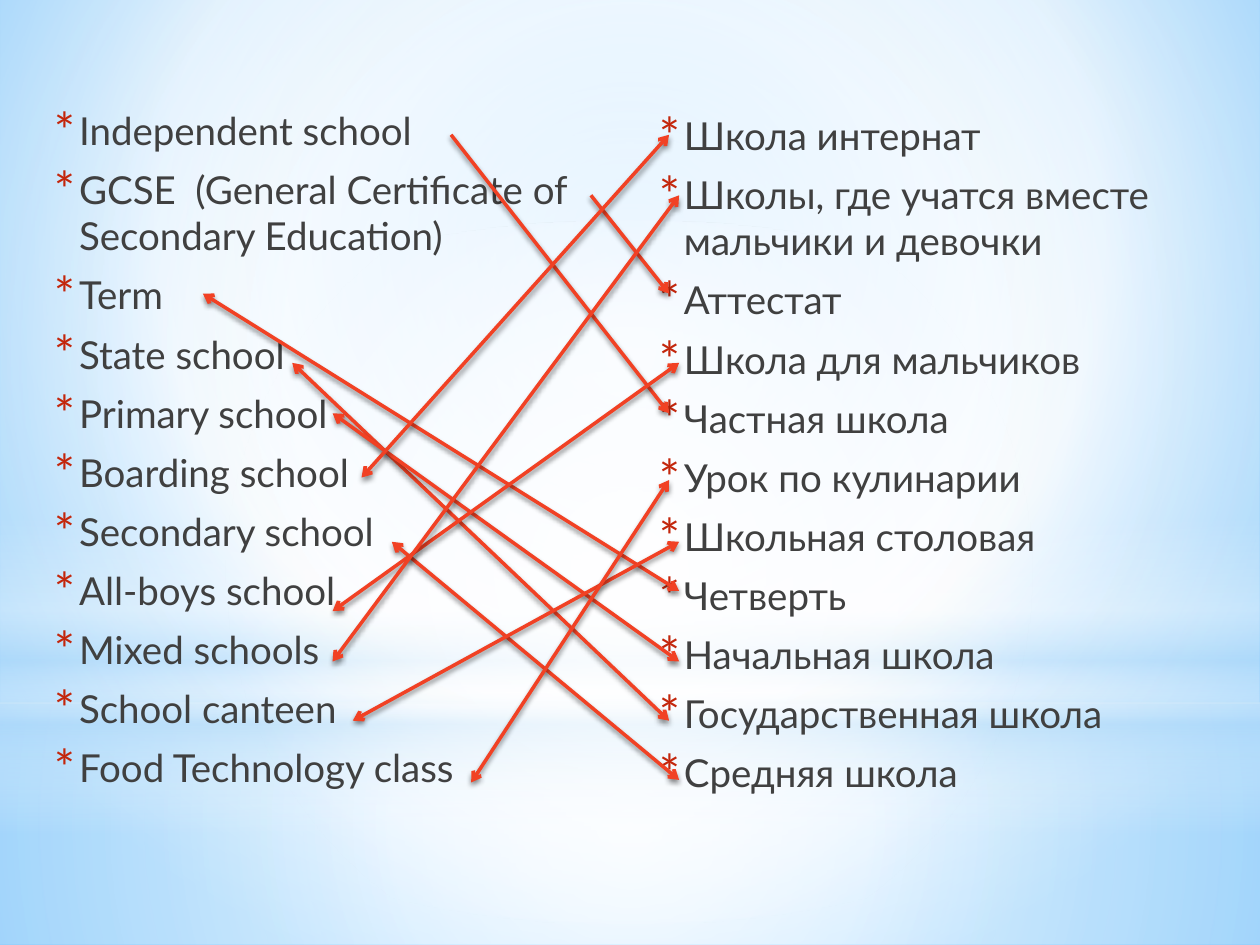
from lxml.etree import SubElement as Sub
from pptx import Presentation
from pptx.dml.color import RGBColor as Rgb
from pptx.enum.shapes import MSO_CONNECTOR as Connector, MSO_SHAPE as Shape
from pptx.oxml.ns import qn
from pptx.util import Inches, Pt

COLORS = {
    "white": "FFFFFF", "pale": "B4DCFA", "sky": "9ED5FF", "blue": "5BB9FF",
    "text": "404040", "bullet": "C3260C", "arrow": "F14124", "shadow": "000000",
}
CENTER = (50, 50, 50, 50)
BACKGROUND = [(0, "sky", 100), (60, "white", 100), (100, "blue", 100)]
GLOWS = [
    (Shape.RECTANGLE, (0, 5.58, 10, 1.92), CENTER,
     [(0, "white", 91), (37, "white", 76), (100, "pale", 79)]),
    (Shape.RECTANGLE, (0, 0, 10, 5.58), CENTER,
     [(0, "white", 89), (48, "white", 62), (100, "pale", 79)]),
    (Shape.RECTANGLE, (0, 4.12, 10, 2.5), None,
     [(0, "white", 0), (29, "white", 30), (45, "pale", 40),
      (55, "white", 26), (65, "pale", 60), (100, "white", 0)]),
    (Shape.OVAL, (0, 1.75, 10, 5.58), CENTER,
     [(0, "white", 100), (56, "white", 0)]),
]
COLUMNS = [
    ((0.28, 0.8, 4.63, 6.41), [
        "Independent school",
        "GCSE  (General Certificate of Secondary Education)",
        "Term", "State school", "Primary school", "Boarding school",
        "Secondary school", "All-boys school", "Mixed schools",
        "School canteen", "Food Technology class",
    ]),
    ((5.08, 0.84, 4.49, 5.86), [
        "Школа интернат", "Школы, где учатся вместе мальчики и девочки",
        "Аттестат", "Школа для мальчиков", "Частная школа",
        "Урок по кулинарии", "Школьная столовая", "Четверть",
        "Начальная школа", "Государственная школа", "Средняя школа",
    ]),
]
BOTH, END = ("headEnd", "tailEnd"), ("tailEnd",)
MATCHES = [
    ((3.58, 1.07), (5.31, 3.28), END),
    ((4.69, 1.55), (5.31, 2.33), END),
    ((1.61, 2.33), (5.39, 4.69), BOTH),
    ((2.32, 2.88), (5.31, 5.72), BOTH),
    ((2.64, 3.28), (5.39, 5.25), BOTH),
    ((2.87, 3.79), (5.31, 1.07), BOTH),
    ((3.11, 4.3), (5.39, 6.19), BOTH),
    ((2.64, 4.85), (5.39, 2.88), BOTH),
    ((2.64, 5.25), (5.39, 1.55), BOTH),
    ((2.8, 5.72), (5.39, 4.3), BOTH),
    ((3.74, 6.21), (5.31, 3.81), BOTH),
]
PARA_FORMAT = {"space_before": Pt(4.4), "space_after": Pt(3)}
FONT_FORMAT = {"name": "Lato", "size": Pt(22)}


def add(parent, tag, **values):
    return Sub(parent, qn(f"a:{tag}"), {key: str(value) for key, value in values.items()})


def add_color(parent, color, alpha=100):
    node = add(parent, "srgbClr", val=COLORS[color])
    if alpha < 100:
        add(node, "alpha", val=alpha * 1000)


def set_gradient(fill, owner, stops, focus):
    fill.gradient()
    gradient = next(owner.iter(qn("a:gradFill")))
    for child in list(gradient):
        gradient.remove(child)
    stop_list = add(gradient, "gsLst")
    for position, color, alpha in stops:
        add_color(add(stop_list, "gs", pos=position * 1000), color, alpha)
    if focus:
        sides = {side: value * 1000 for side, value in zip("ltrb", focus)}
        add(add(gradient, "path", path="circle"), "fillToRect", **sides)
    else:
        add(gradient, "lin", ang=90 * 60000, scaled=0)


def add_glow(slide, kind, place, focus, stops):
    glow = slide.shapes.add_shape(kind, *map(Inches, place))
    glow.shadow.inherit = False
    glow.line.fill.background()
    set_gradient(glow.fill, glow.element.spPr, stops, focus)


def add_bullet(para):
    props = para._p.get_or_add_pPr()
    props.set("marL", str(Inches(0.25)))
    props.set("indent", str(Inches(-0.2)))
    add_color(add(props, "buClr"), "bullet")
    add(props, "buSzPct", val=130000)
    add(props, "buFont", typeface="Lato")
    add(props, "buChar", char="*")


def add_column(slide, place, terms):
    frame = slide.shapes.add_textbox(*map(Inches, place)).text_frame
    frame.word_wrap = True
    for index, term in enumerate(terms):
        para = frame.add_paragraph() if index else frame.paragraphs[0]
        for name, value in PARA_FORMAT.items():
            setattr(para, name, value)
        add_bullet(para)
        span = para.add_run()
        span.text = term
        for name, value in FONT_FORMAT.items():
            setattr(span.font, name, value)
        span.font.color.rgb = Rgb.from_string(COLORS["text"])


def add_match(slide, start, end, heads):
    arrow = slide.shapes.add_connector(Connector.STRAIGHT, *map(Inches, start + end))
    arrow.line.color.rgb = Rgb.from_string(COLORS["arrow"])
    arrow.line.width = Pt(2)
    props = arrow.element.spPr
    for head in heads:
        add(props.find(qn("a:ln")), head, type="arrow")
    shadow = add(add(props, "effectLst"), "outerShdw", blurRad=Pt(3.1),
                 dist=Pt(1.8), dir=90 * 60000, rotWithShape=0)
    add_color(shadow, "shadow", 45)


def main():
    deck = Presentation()
    deck.slide_width, deck.slide_height = Inches(10), Inches(7.5)
    slide = deck.slides.add_slide(deck.slide_layouts[6])
    set_gradient(slide.background.fill, slide.element, BACKGROUND, (20, 10, 20, 60))
    for glow in GLOWS:
        add_glow(slide, *glow)
    for column in COLUMNS:
        add_column(slide, *column)
    for match in MATCHES:
        add_match(slide, *match)
    deck.save("out.pptx")


if __name__ == "__main__":
    main()
